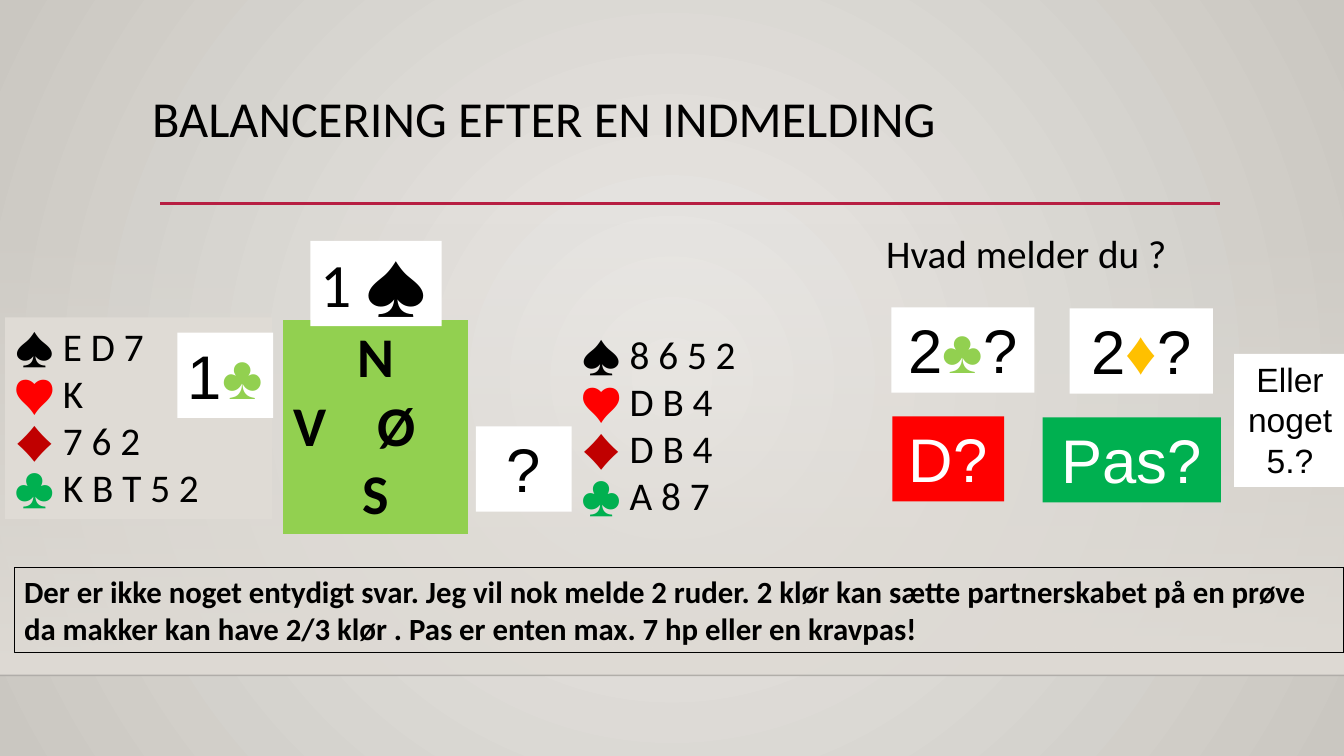
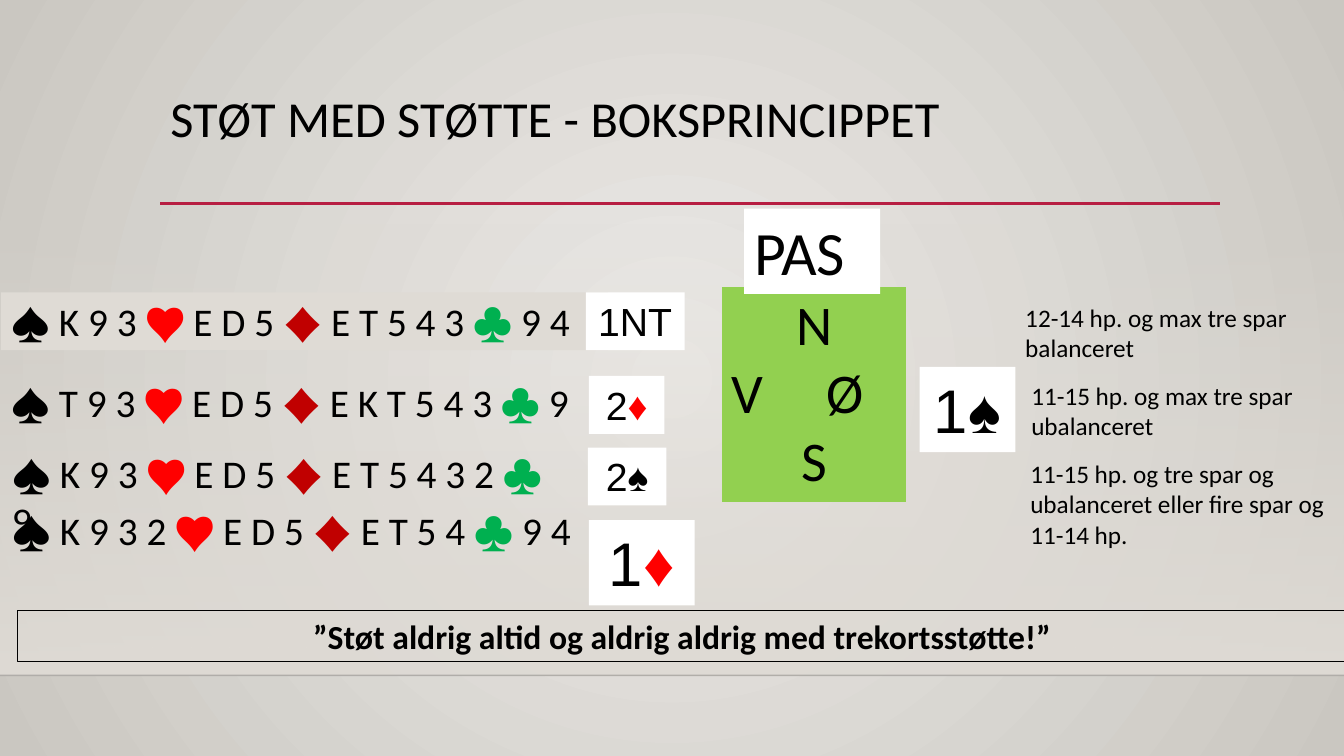
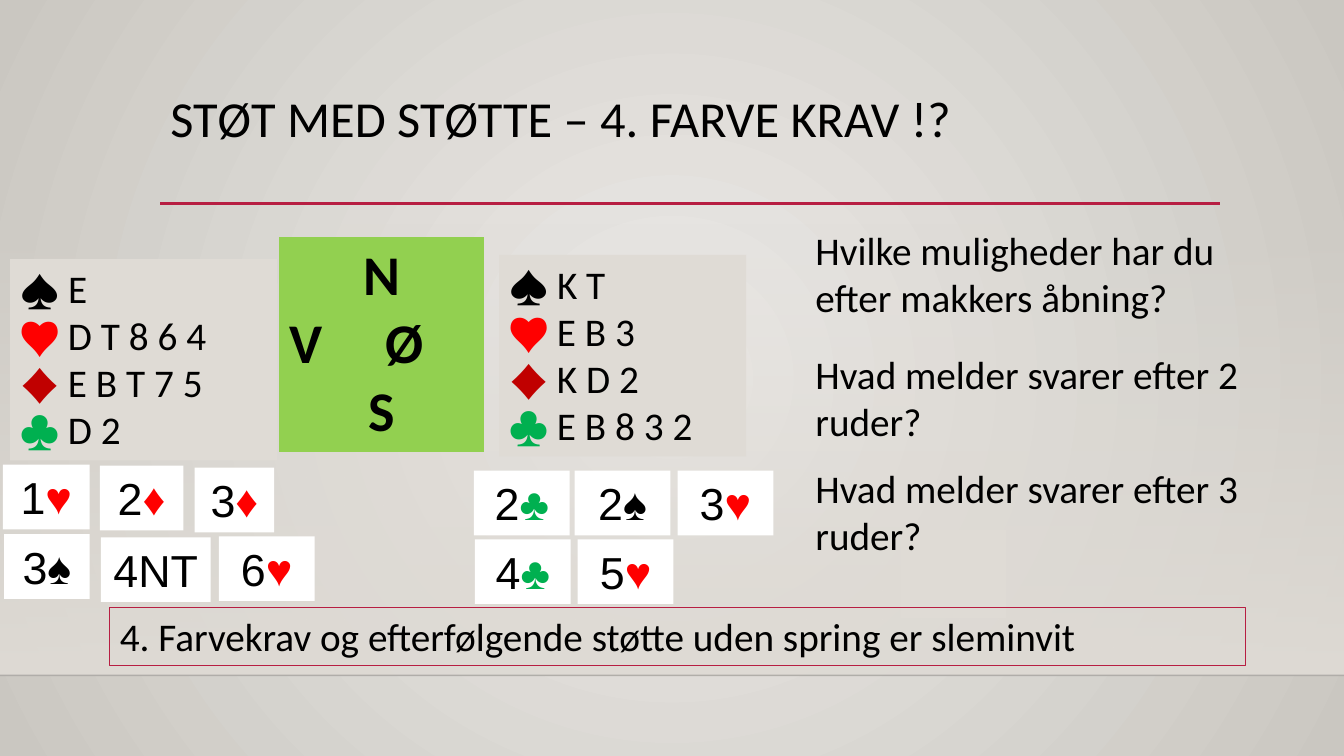
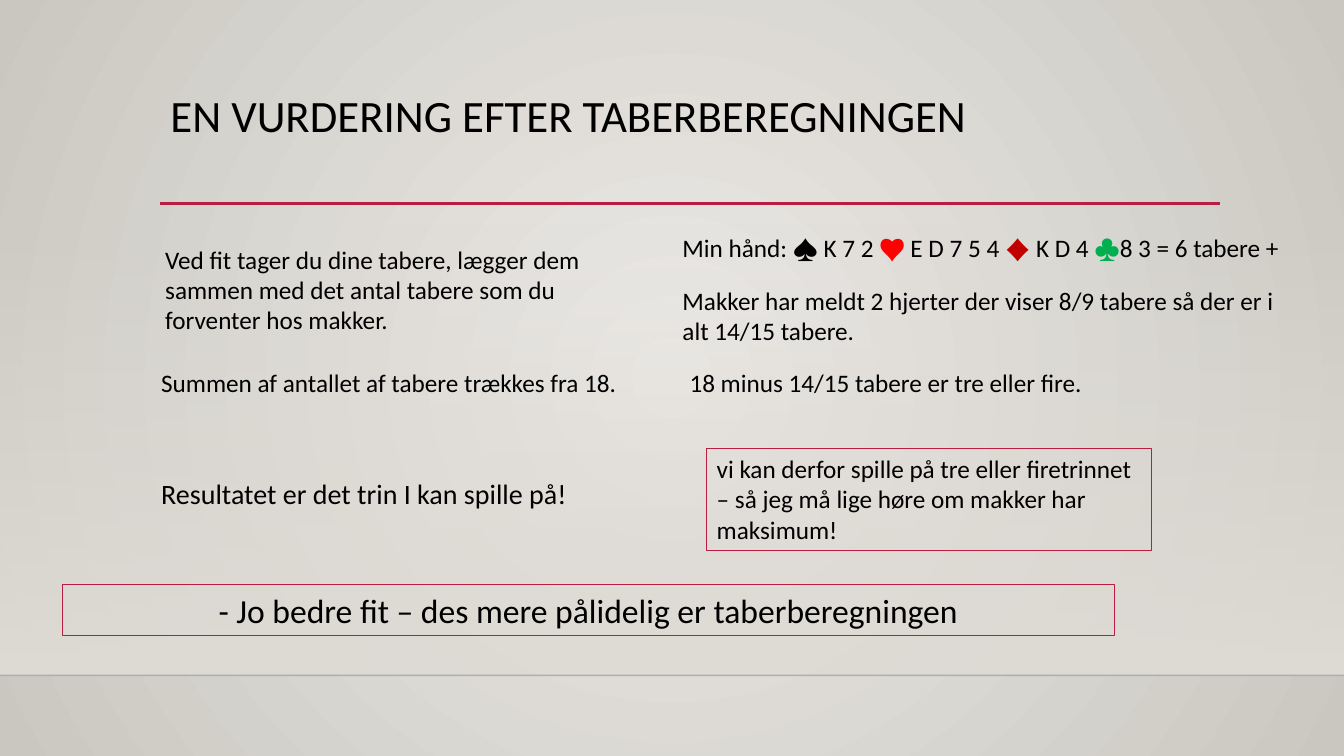
import itertools
from typing import NamedTuple, Optional

import pptx
import pptx.util
from lxml import etree
from pptx.dml.color import RGBColor
from pptx.enum.shapes import MSO_CONNECTOR, MSO_SHAPE
from pptx.enum.text import MSO_ANCHOR, MSO_AUTO_SIZE, PP_ALIGN
from pptx.oxml.ns import qn

Inches, Pt = pptx.util.Inches, pptx.util.Pt

WIDTH, HEIGHT = 13.33, 7.5
BLACK = RGBColor(0, 0, 0)
WHITE = RGBColor(0xFF, 0xFF, 0xFF)
RED = RGBColor(0xFF, 0, 0)
DARK_RED = RGBColor(0xC0, 0, 0)
GREEN = RGBColor(0, 0xB0, 0x50)
LIME = RGBColor(0x92, 0xD0, 0x50)
AMBER = RGBColor(0xFF, 0xC0, 0)
CRIMSON = RGBColor(0xB7, 0x1E, 0x42)
SAND = RGBColor(0xDF, 0xDB, 0xD5)
BACK_CENTRE = RGBColor(0xEC, 0xEA, 0xE7)
BACK_EDGE = RGBColor(0xCA, 0xC7, 0xC1)
EDGE_LINE = RGBColor(0, 0, 1)

HAND_SUITS = {"♠": BLACK, "♥": RED, "♦": DARK_RED, "♣": GREEN}
BID_SUITS = {**HAND_SUITS, "♦": RED}
BRIGHT_SUITS = {**HAND_SUITS, "♦": AMBER, "♣": LIME}
TEXT_VARIANT = chr(0xFE0E)  # asks for the plain glyph of a suit, not the emoji
LINE_HEIGHT = 1.22


class Style(NamedTuple):
    size: int
    font: str = "Calibri"
    fill: Optional[RGBColor] = None
    line: Optional[RGBColor] = None
    color: RGBColor = BLACK
    suits: dict = HAND_SUITS
    bold: bool = False
    centred: bool = False
    spacing: Optional[float] = None


def bid(size, fill=WHITE, color=BLACK, suits=BID_SUITS):
    return Style(size, "Arial", fill, color=color, suits=suits, centred=True)


TEXT = Style(28)
NOTE = Style(18)
HAND = Style(28, fill=SAND)
CALL = Style(44, fill=WHITE)
BRIGHT_BID = bid(44, suits=BRIGHT_SUITS)
BIG_BID, MID_BID, SMALL_BID = bid(44), bid(32), bid(28)

# Boxes: style, text, left, top, width, and the number of lines if the text wraps
SLIDES = [
    {
        "title": ("BALANCERING EFTER EN INDMELDING", 1.41, 36),
        # left, top, column widths, bold, distance from V to Ø
        "compass": (0.72, 2.15, (2.09, 1.83, 2.75), True, 0.83),
        "boxes": [
            (TEXT, "Hvad melder du ?", 8.69, 2.23, 3.25),
            (HAND, "♠ E D 7\n♥ K\n♦ 7 6 2\n♣ K B T 5 2", 0.05, 3.15, 2.65),
            (Style(22, line=BLACK, bold=True),
             "Der er ikke noget entydigt svar. Jeg vil nok melde 2 ruder. "
             "2 klør kan sætte partnerskabet på en prøve da makker kan have "
             "2/3 klør . Pas er enten max. 7 hp eller en kravpas!",
             0.14, 5.63, 13.19, 2),
            (TEXT, "♠ 8 6 5 2\n♥ D B 4\n♦ D B 4\n♣ A 8 7", 5.67, 3.23, 2.45),
            (CALL, "1 ♠", 3.08, 2.39, 1.3),
            (BRIGHT_BID, "1♣", 1.76, 3.3, 0.95),
            (BRIGHT_BID, "?", 4.72, 4.23, 0.95),
            (BRIGHT_BID, "2♣?", 8.84, 3.05, 1.42),
            (BRIGHT_BID, "2♦?", 10.61, 3.06, 1.42),
            (bid(44, RED, WHITE), "D?", 8.85, 4.13, 1.11),
            (bid(44, GREEN, WHITE), "Pas?", 10.34, 4.14, 1.77),
            (bid(24), "Eller noget 5.?", 12.24, 3.51, 1.11, 3),
        ],
    },
    {
        "title": ("STØT MED STØTTE - BOKSPRINCIPPET", 1.59, 36),
        "compass": (5.07, 1.83, (2.09, 1.83, 2.75), False, 0.94),
        "boxes": [
            (HAND, "♠ K 9 3 ♥ E D 5 ♦ E T 5 4 3 ♣ 9 4", 0.01, 2.9, 6.02),
            (Style(24, line=BLACK, bold=True, centred=True),
             "”Støt aldrig altid og aldrig aldrig med trekortsstøtte!”",
             0.17, 6.06, 13.19),
            (CALL, "PAS", 7.38, 2.07, 1.35),
            (BIG_BID, "1♦", 5.84, 5.16, 1.05),
            (BIG_BID, "1♠", 9.12, 3.64, 0.95),
            (SMALL_BID, "1NT", 5.81, 2.9, 0.98),
            (TEXT, "♠ T 9 3 ♥ E D 5 ♦ E K T 5 4 3 ♣ 9", 0.01, 3.7, 5.76),
            (SMALL_BID, "2♦", 5.84, 3.73, 0.75),
            (TEXT, "♠ K 9 3 ♥ E D 5 ♦ E T 5 4 3 2 ♣ 9", 0.02, 4.41, 5.67),
            (SMALL_BID, "2♠", 5.83, 4.44, 0.78),
            (NOTE, "12-14 hp. og max tre spar balanceret", 10.07, 2.95, 3.25, 2),
            (NOTE, "11-15 hp. og tre spar og ubalanceret eller fire spar og "
                   "11-14 hp.", 10.12, 4.5, 3.25, 3),
            (NOTE, "11-15 hp. og max tre spar ubalanceret", 10.13, 3.72, 3.25, 2),
            (TEXT, "♠ K 9 3 2 ♥ E D 5 ♦ E T 5 4 ♣ 9 4", 0.02, 4.97, 5.76),
        ],
    },
    {
        "title": ("STØT MED STØTTE – 4. FARVE KRAV !?", 1.59, 36),
        "compass": (0.88, 1.33, (1.89, 2.03, 2.75), True, 0.95),
        "boxes": [
            (HAND, "♠ E\n♥ D T 8 6 4\n♦ E B T 7 5\n♣ D 2", 0.1, 2.57, 2.65),
            (HAND, "♠ K T\n♥ E B 3\n♦ K D 2\n♣ E B 8 3 2", 4.95, 2.53, 2.45),
            (TEXT, "Hvilke muligheder har du efter makkers åbning?",
             7.99, 2.2, 4.7, 2),
            (TEXT, "Hvad melder svarer efter 2 ruder?", 7.99, 3.43, 5.43, 2),
            (TEXT, "Hvad melder svarer efter 3 ruder?", 7.99, 4.56, 5.43, 2),
            (MID_BID, "1♥", 0.03, 4.61, 0.86),
            (MID_BID, "2♦", 0.99, 4.62, 0.83),
            (MID_BID, "3♦", 1.93, 4.64, 0.79),
            (MID_BID, "3♠", 0.04, 5.3, 0.85),
            (MID_BID, "4NT", 1, 5.33, 1.09),
            (MID_BID, "6♥", 2.17, 5.32, 0.95),
            (MID_BID, "2♣", 4.7, 4.67, 0.95),
            (MID_BID, "2♠", 5.7, 4.67, 0.95),
            (MID_BID, "3♥", 6.72, 4.67, 0.95),
            (MID_BID, "4♣", 4.71, 5.35, 0.95),
            (MID_BID, "5♥", 5.73, 5.35, 0.95),
            (Style(28, line=CRIMSON),
             "4. Farvekrav og efterfølgende støtte uden spring er sleminvit",
             1.09, 6.03, 11.26),
        ],
        "patch": (8.93, 5.26, 1.05, 0.87),
    },
    {
        "title": ("EN VURDERING EFTER TABERBEREGNINGEN", 1.59, 32),
        "boxes": [
            (Style(20, spacing=1.2), "Resultatet er det trin I kan spille på!",
             1.5, 4.61, 4.65),
            (NOTE, "Min hånd: ♠ K 7 2 ♥ E D 7 5 4 ♦ K D 4 ♣8 3 = 6 tabere +",
             6.67, 2.26, 6.28),
            (NOTE, "Makker har meldt 2 hjerter der viser 8/9 tabere så der er i "
                   "alt 14/15 tabere.", 6.67, 2.78, 6.21, 2),
            (NOTE, "18 minus 14/15 tabere er tre eller fire.", 6.74, 3.59, 4.41),
            (Style(18, line=CRIMSON),
             "vi kan derfor spille på tre eller firetrinnet – så jeg må lige "
             "høre om makker har maksimum!", 7.01, 4.45, 4.41, 3),
            (Style(24, line=CRIMSON, centred=True),
             "- Jo bedre fit – des mere pålidelig er taberberegningen",
             0.62, 5.8, 10.43),
            (NOTE, "Ved fit tager du dine tabere, lægger dem sammen med det antal "
                   "tabere som du forventer hos makker.", 1.54, 2.37, 4.56, 3),
            (NOTE, "Summen af antallet af tabere trækkes fra 18.",
             1.5, 3.59, 6.67),
        ],
    },
]
COMPASS_ROWS = (1.02, 2.13, 1.31)
NO_STYLE_NO_GRID = "{2D5ABB26-0587-4C30-8999-92F81FD0307C}"


def child(parent, tag, **attributes):
    return etree.SubElement(parent, qn(tag), attributes)


def set_gradient(fill, element, stops, radial=False):
    """Stops are (position %, colour, opacity %)."""
    fill.gradient()
    grad = element.find(".//" + qn("a:gradFill"))
    del grad[:]
    gs_list = child(grad, "a:gsLst")
    for pos, color, opacity in stops:
        stop = child(gs_list, "a:gs", pos=str(pos * 1000))
        srgb = child(stop, "a:srgbClr", val=str(color))
        if opacity < 100:
            child(srgb, "a:alpha", val=str(opacity * 1000))
    if radial:
        shade = child(grad, "a:path", **{"path": "circle"})
        child(shade, "a:fillToRect", l="50000", t="50000", r="50000", b="50000")
    else:
        child(grad, "a:lin", ang="5400000", scaled="0")


def add_rect(s, left, top, width, height):
    sp = s.shapes.add_shape(MSO_SHAPE.RECTANGLE, *map(Inches, (left, top, width, height)))
    sp.shadow.inherit = False
    sp.line.fill.background()
    return sp


def add_rule(s, x1, x2, y, color, width):
    line = s.shapes.add_connector(MSO_CONNECTOR.STRAIGHT, *map(Inches, (x1, y, x2, y)))
    line.line.color.rgb = color
    line.line.width = Pt(width)
    child(line.element.spPr, "a:effectLst")
    return line


def decorate(prs, layout, s):
    """Draw the shared panel and rules on a slide, then move them to the layout."""
    master = prs.slide_master
    set_gradient(master.background.fill, master.element,
                 [(0, BACK_CENTRE, 100), (100, BACK_EDGE, 100)], radial=True)
    panel = add_rect(s, 0, 2.21, WIDTH, 4.49)
    set_gradient(panel.fill, panel.element, [(0, SAND, 0), (100, SAND, 100)])
    edge = add_rule(s, 0, WIDTH, 6.7, EDGE_LINE, 1)
    child(edge.element.find(".//" + qn("a:srgbClr")), "a:alpha", val="20000")
    title_rule = add_rule(s, 1.59, 12.1, 2.02, CRIMSON, 2.5)
    for part in (panel, edge, title_rule):
        layout.shapes.element.append(part.element)


def format_font(font, name, size, color, bold=False):
    font.name, font.size, font.bold = name, Pt(size), bold
    font.color.rgb = color


def set_title(s, text, left, size):
    title = s.shapes.title
    title.left, title.top = Inches(left), Inches(0.88)
    title.width, title.height = Inches(12.09 - left), Inches(1.15)
    tf = title.text_frame
    tf.text = text
    tf.auto_size = MSO_AUTO_SIZE.NONE
    tf.vertical_anchor = MSO_ANCHOR.TOP
    p = tf.paragraphs[0]
    p.alignment, p.line_spacing = PP_ALIGN.LEFT, 0.9
    format_font(p.runs[0].font, "Calibri", size, BLACK)


def add_compass(s, left, top, columns, bold, east_at):
    frame = s.shapes.add_table(3, 3, Inches(left), Inches(top),
                               Inches(sum(columns)), Inches(sum(COMPASS_ROWS)))
    table = frame.table
    table.first_row = table.horz_banding = False
    frame.element.find(".//" + qn("a:tableStyleId")).text = NO_STYLE_NO_GRID
    for column, width in zip(table.columns, columns):
        column.width = Inches(width)
    for row, height in zip(table.rows, COMPASS_ROWS):
        row.height = Inches(height)
    for cell in table.iter_cells():
        cell.fill.background()
    centre = table.cell(1, 1)
    centre.fill.solid()
    centre.fill.fore_color.rgb = LIME
    centre.text_frame.text = "N\nV\tØ\nS"
    for p in centre.text_frame.paragraphs:
        if "\t" in p.text:
            tabs = child(p._p.get_or_add_pPr(), "a:tabLst")
            child(tabs, "a:tab", pos=str(Inches(east_at)), algn="l")
        else:
            p.alignment = PP_ALIGN.CENTER
        format_font(p.runs[0].font, "Calibri", 40, BLACK, bold)


def add_box(s, style, text, left, top, width, lines=None):
    """Add a text box as high as its lines, with each suit in its own colour."""
    paragraphs = text.split("\n")
    height = (lines or len(paragraphs)) * style.size * LINE_HEIGHT / 72 + 0.1
    sp = s.shapes.add_textbox(*map(Inches, (left, top, width, height)))
    if style.fill is not None:
        sp.fill.solid()
        sp.fill.fore_color.rgb = style.fill
    if style.line is not None:
        sp.line.color.rgb = style.line
        sp.line.width = Pt(0.75)
    tf = sp.text_frame
    tf.word_wrap = True
    tf.auto_size = MSO_AUTO_SIZE.SHAPE_TO_FIT_TEXT
    for i, line in enumerate(paragraphs):
        p = tf.add_paragraph() if i else tf.paragraphs[0]
        p.alignment = PP_ALIGN.CENTER if style.centred else PP_ALIGN.LEFT
        if style.spacing:
            p.line_spacing = style.spacing
        for color, chars in itertools.groupby(
                line, key=lambda ch: style.suits.get(ch, style.color)):
            r = p.add_run()
            r.text = "".join(ch + TEXT_VARIANT if ch in style.suits else ch
                             for ch in chars)
            format_font(r.font, style.font, style.size, color, style.bold)


def main():
    prs = pptx.Presentation()
    prs.slide_width, prs.slide_height = Inches(WIDTH), Inches(HEIGHT)
    layout = prs.slide_layouts[5]
    for number, content in enumerate(SLIDES):
        s = prs.slides.add_slide(layout)
        if number == 0:
            decorate(prs, layout, s)
        if "compass" in content:
            add_compass(s, *content["compass"])
        set_title(s, *content["title"])
        if "patch" in content:
            patch = add_rect(s, *content["patch"])
            patch.fill.solid()
            patch.fill.fore_color.rgb = SAND
        for box in content["boxes"]:
            add_box(s, *box)
    prs.save("out.pptx")


if __name__ == "__main__":
    main()
